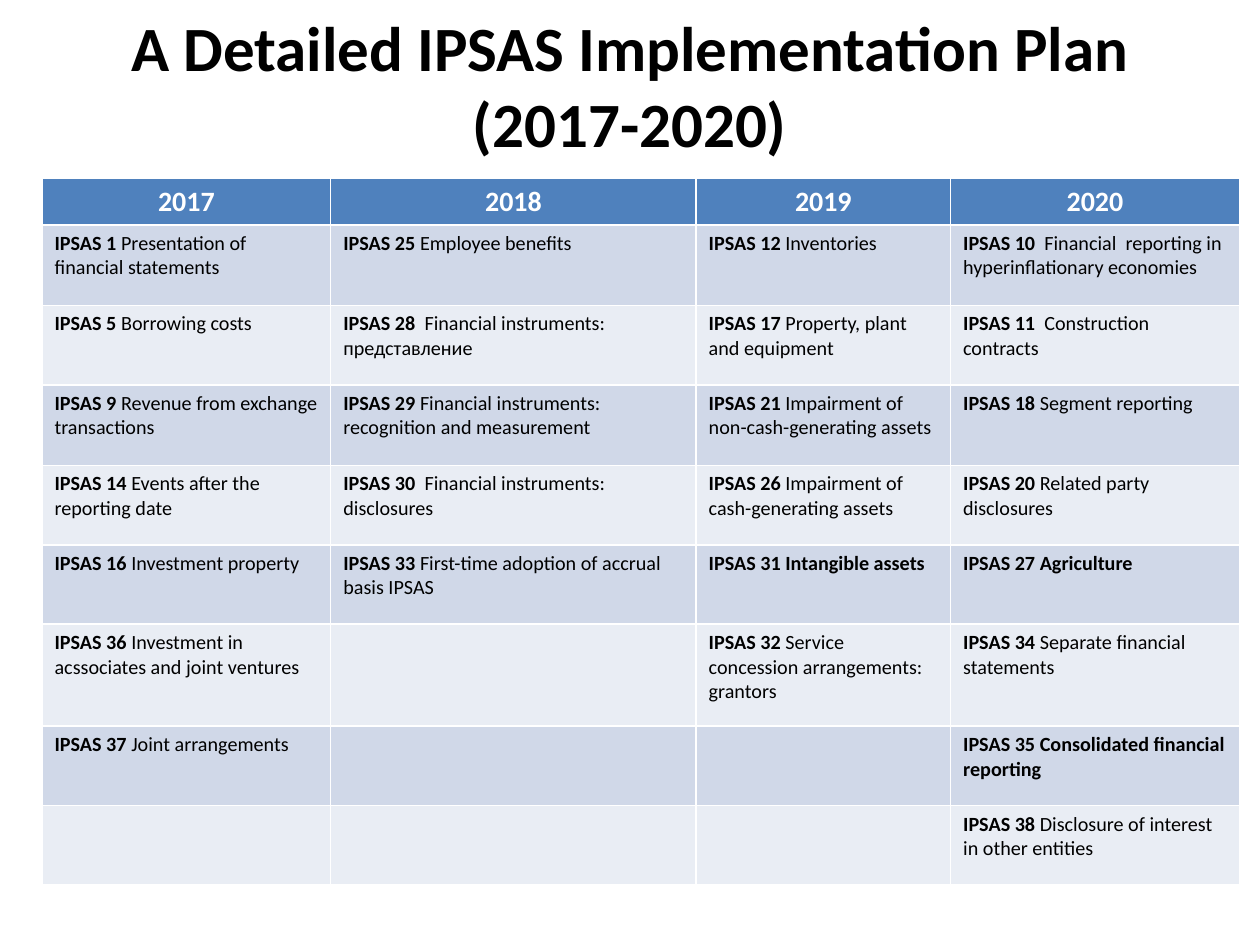
from pptx import Presentation
from pptx.dml.color import RGBColor
from pptx.enum.text import MSO_ANCHOR, MSO_AUTO_SIZE, PP_ALIGN
from pptx.util import Pt

CENTER = PP_ALIGN.CENTER
LEFT = PP_ALIGN.LEFT
MIDDLE = MSO_ANCHOR.MIDDLE
NO_FIT = MSO_AUTO_SIZE.NONE

PLAN = {
    "2017": [
        (1, "Presentation of financial statements"),
        (5, "Borrowing costs"),
        (9, "Revenue from exchange transactions"),
        (14, "Events after the reporting date"),
        (16, "Investment property"),
        (36, "Investment in acssociates and joint ventures"),
        (37, "Joint arrangements"),
    ],
    "2018": [
        (25, "Employee benefits"),
        (28, " Financial instruments: представление"),
        (29, "Financial instruments: recognition and measurement"),
        (30, " Financial instruments: disclosures"),
        (33, "First-time adoption of accrual basis IPSAS"),
    ],
    "2019": [
        (12, "Inventories"),
        (17, "Property, plant and equipment"),
        (21, "Impairment of non-cash-generating assets"),
        (26, "Impairment of cash-generating assets"),
        (31, "Intangible assets"),
        (32, "Service concession arrangements: grantors"),
    ],
    "2020": [
        (10, " Financial  reporting in hyperinflationary economies"),
        (11, " Construction contracts"),
        (18, "Segment reporting"),
        (20, "Related party disclosures"),
        (27, "Agriculture"),
        (34, "Separate financial statements"),
        (35, "Consolidated financial reporting"),
        (38, "Disclosure of interest in other entities"),
    ],
}
STRONG = {27, 31, 35}
WIDTHS = [165, 208.8, 145.4, 165]
HEIGHTS = [25.2, 46, 45.4, 46, 45.4, 45.4, 58.3, 45.4, 45.4]


def color(code):
    return RGBColor.from_string(code)


class Deck:
    font = "Calibri"
    ink = "000000"
    white = "FFFFFF"
    head = "4F81BD"
    bands = ["D0D8E8", "E9EDF4"]

    def __init__(self):
        self.show = Presentation()
        self.show.slide_width = Pt(720)
        self.show.slide_height = Pt(540)
        self.slide = self.show.slides.add_slide(self.show.slide_layouts[5])

    def text(self, frame, parts, size, ink, align):
        para = frame.paragraphs[0]
        para.alignment = align
        for words, bold in parts:
            run = para.add_run()
            run.text = words
            run.font.name = self.font
            run.font.size = Pt(size)
            run.font.bold = bold
            run.font.color.rgb = color(ink)

    def title(self, words, left, top, width, height):
        shape = self.slide.shapes.title
        shape.left, shape.top = Pt(left), Pt(top)
        shape.width, shape.height = Pt(width), Pt(height)
        frame = shape.text_frame
        frame.word_wrap = True
        frame.auto_size = NO_FIT
        frame.vertical_anchor = MIDDLE
        self.text(frame, [(words, True)], 36, self.ink, CENTER)

    def table(self, plan, left, top, widths, heights):
        grid = self.slide.shapes.add_table(
            len(heights), len(widths), Pt(left), Pt(top),
            Pt(sum(widths)), Pt(sum(heights))).table
        for row, height in zip(grid.rows, heights):
            row.height = Pt(height)
        for col, width in zip(grid.columns, widths):
            col.width = Pt(width)
        for r in range(len(heights)):
            for c in range(len(widths)):
                fill = grid.cell(r, c).fill
                fill.solid()
                fill.fore_color.rgb = color(
                    self.bands[(r - 1) % 2] if r else self.head)
        for c, (year, items) in enumerate(plan.items()):
            self.text(grid.cell(0, c).text_frame, [(year, True)],
                      16, self.white, CENTER)
            for r, (num, words) in enumerate(items, 1):
                parts = [(f"IPSAS {num} ", True), (words, num in STRONG)]
                self.text(grid.cell(r, c).text_frame, parts,
                          11.5, self.ink, LEFT)


def main():
    deck = Deck()
    deck.title("A Detailed IPSAS Implementation Plan (2017-2020)",
               36, 12.2, 648, 72)
    deck.table(PLAN, 24, 101.8, WIDTHS, HEIGHTS)
    deck.show.save("out.pptx")


if __name__ == "__main__":
    main()
